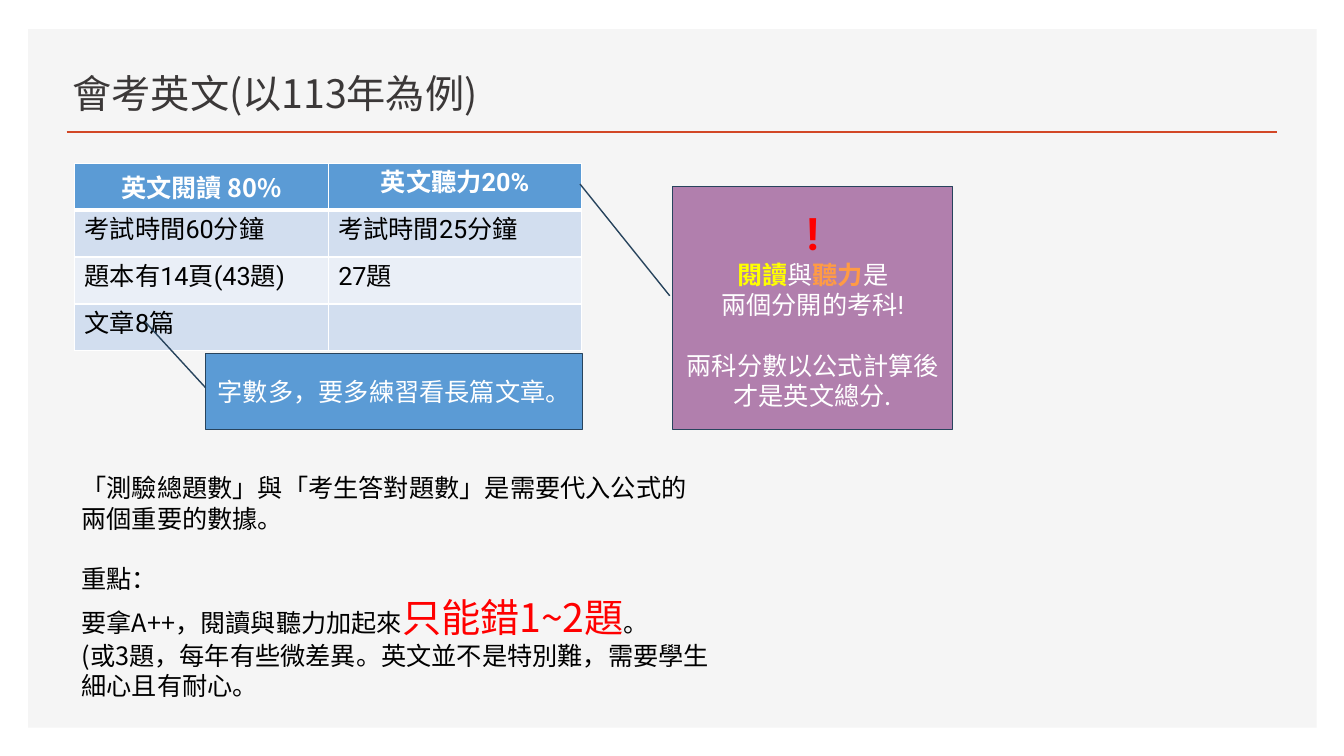
from lxml import etree
from pptx import Presentation
from pptx.dml.color import RGBColor
from pptx.enum.shapes import MSO_CONNECTOR as LINK, MSO_SHAPE as SHAPE
from pptx.enum.text import MSO_ANCHOR as ANCHOR, PP_ALIGN as ALIGN
from pptx.oxml.ns import qn
from pptx.util import Inches, Pt

WHITE = RGBColor(0xFF, 0xFF, 0xFF)
BLACK = RGBColor(0, 0, 0)
GREY = RGBColor(0xF5, 0xF5, 0xF5)
DARK = RGBColor(0x3B, 0x38, 0x38)
RUST = RGBColor(0xD2, 0x47, 0x26)
BLUE = RGBColor(0x5B, 0x9B, 0xD5)
PALE = RGBColor(0xD2, 0xDE, 0xEF)
LIGHT = RGBColor(0xEA, 0xEF, 0xF7)
NAVY = RGBColor(0x28, 0x44, 0x5D)
PLUM = RGBColor(0xB1, 0x7F, 0xAD)
RED = RGBColor(0xFF, 0, 0)
YELLOW = RGBColor(0xFF, 0xFF, 0)
ORANGE = RGBColor(0xFF, 0x9B, 0x45)
SANS = "Noto Sans CJK SC"
TRAD = "Noto Sans CJK TC"
LATIN = "Roboto"


def write(para, text, size=18, font=SANS, color=BLACK, bold=False):
    run = para.add_run()
    run.text = text
    face = run.font
    face.size, face.name, face.bold = Pt(size), font, bold
    face.color.rgb = color
    east = etree.SubElement(run._r.get_or_add_rPr(), qn("a:ea"))
    east.set("typeface", font)


class Deck:
    def __init__(self):
        self.file = Presentation()
        self.file.slide_width = Inches(13.33)
        self.file.slide_height = Inches(7.5)
        self.slide = self.file.slides.add_slide(self.file.slide_layouts[5])
        self.shapes = self.slide.shapes

    def fill(self, frame, lines, align=ALIGN.LEFT, **style):
        frame.word_wrap = True
        for i, (gap, runs) in enumerate(lines):
            para = frame.add_paragraph() if i else frame.paragraphs[0]
            para.alignment = align
            para.space_before = Pt(gap)
            for text, extra in runs:
                write(para, text, **{**style, **extra})

    def shape(self, kind, box, color, edge=None):
        item = self.shapes.add_shape(kind, *map(Inches, box))
        item.shadow.inherit = False
        item.fill.solid()
        item.fill.fore_color.rgb = color
        if edge:
            item.line.color.rgb = edge
            item.line.width = Pt(1)
        else:
            item.line.fill.background()
        return item

    def panel(self, box):
        item = self.shape(SHAPE.RECTANGLE, box, GREY)
        tree = self.shapes._spTree
        tree.remove(item._element)
        tree.insert(2, item._element)

    def rule(self, left, top, right):
        line = self.shapes.add_connector(
            LINK.STRAIGHT, Inches(left), Inches(top), Inches(right), Inches(top))
        line.line.color.rgb = RUST
        line.line.width = Pt(2)
        etree.SubElement(line._element.spPr, qn("a:effectLst"))

    def title(self, box, text):
        item = self.shapes.title
        item.left, item.top, item.width, item.height = map(Inches, box)
        frame = item.text_frame
        frame.vertical_anchor = ANCHOR.BOTTOM
        self.fill(frame, [(0, [(text, {})])], size=28, font=TRAD, color=DARK)

    def text(self, box, lines):
        item = self.shapes.add_textbox(*map(Inches, box))
        self.fill(item.text_frame, lines)

    def callout(self, box, color, tail, lines):
        item = self.shape(SHAPE.LINE_CALLOUT_1, box, color, NAVY)
        for i, value in enumerate(tail):
            item.adjustments[i] = value
        item.text_frame.vertical_anchor = ANCHOR.MIDDLE
        self.fill(item.text_frame, lines, ALIGN.CENTER, font=LATIN, color=WHITE)

    def border(self, cell, low):
        props = cell._tc.get_or_add_tcPr()
        for i, (side, width) in enumerate(
                (("lnL", 1), ("lnR", 1), ("lnT", 1), ("lnB", low))):
            line = etree.Element(qn("a:" + side), w=str(Pt(width)))
            solid = etree.SubElement(line, qn("a:solidFill"))
            etree.SubElement(solid, qn("a:srgbClr"), val=str(WHITE))
            props.insert(i, line)

    def table(self, box, rows):
        grid = self.shapes.add_table(len(rows), 2, *map(Inches, box)).table
        for r, row in enumerate(rows):
            head = r == 0
            for c, text in enumerate(row):
                cell = grid.cell(r, c)
                cell.fill.solid()
                cell.fill.fore_color.rgb = BLUE if head else (LIGHT, PALE)[r % 2]
                self.border(cell, 3 if head else 1)
                self.fill(cell.text_frame, [(0, [(text, {})] if text else [])],
                          ALIGN.CENTER if head else ALIGN.LEFT,
                          font=TRAD if head and c == 0 else LATIN,
                          color=WHITE if head else BLACK, bold=head)


def main():
    deck = Deck()
    deck.panel((0.28, 0.29, 12.78, 6.93))
    deck.rule(0.66, 1.31, 12.67)
    deck.title((0.62, 0.5, 7.52, 0.7), "會考英文(以113年為例)")
    deck.table((0.74, 1.62, 5.03, 1.86), [
        ("英文閱讀 80%", "英文聽力20%"),
        ("考試時間60分鐘", "考試時間25分鐘"),
        ("題本有14頁(43題)", "27題"),
        ("文章8篇", ""),
    ])
    deck.text((0.71, 4.64, 6.42, 2.39), [
        (0, [("「測驗總題數」與「考生答對題數」是需要代入公式的兩個重要的數據。", {})]),
        (21.5, [("重點：", {"font": LATIN})]),
        (0, [("要拿A++，閱讀與聽力加起來", {}),
             ("只能錯1~2題", {"size": 28, "color": RED}), ("。", {})]),
        (0, [("(或3題，每年有些微差異。英文並不是特別難，需要學生細心且有耐心。", {})]),
    ])
    deck.callout((2.04, 3.51, 3.74, 0.75), BLUE, (0.45, 0, -0.42, -0.16),
                 [(0, [("字數多，要多練習看長篇文章。", {})])])
    deck.callout((6.67, 1.85, 2.78, 2.41), PLUM, (0.45, -0.01, -0.01, -0.33), [
        (0, [("!", {"size": 32, "color": RED, "bold": True})]),
        (0, [("閱讀", {"color": YELLOW, "bold": True}), ("與", {}),
             ("聽力", {"color": ORANGE, "bold": True}), ("是", {})]),
        (0, [("兩個分開的考科!", {})]),
        (21.5, [("兩科分數以公式計算後", {"font": SANS})]),
        (0, [("才是英文總分.", {"font": SANS})]),
    ])
    deck.file.save("out.pptx")


if __name__ == "__main__":
    main()
